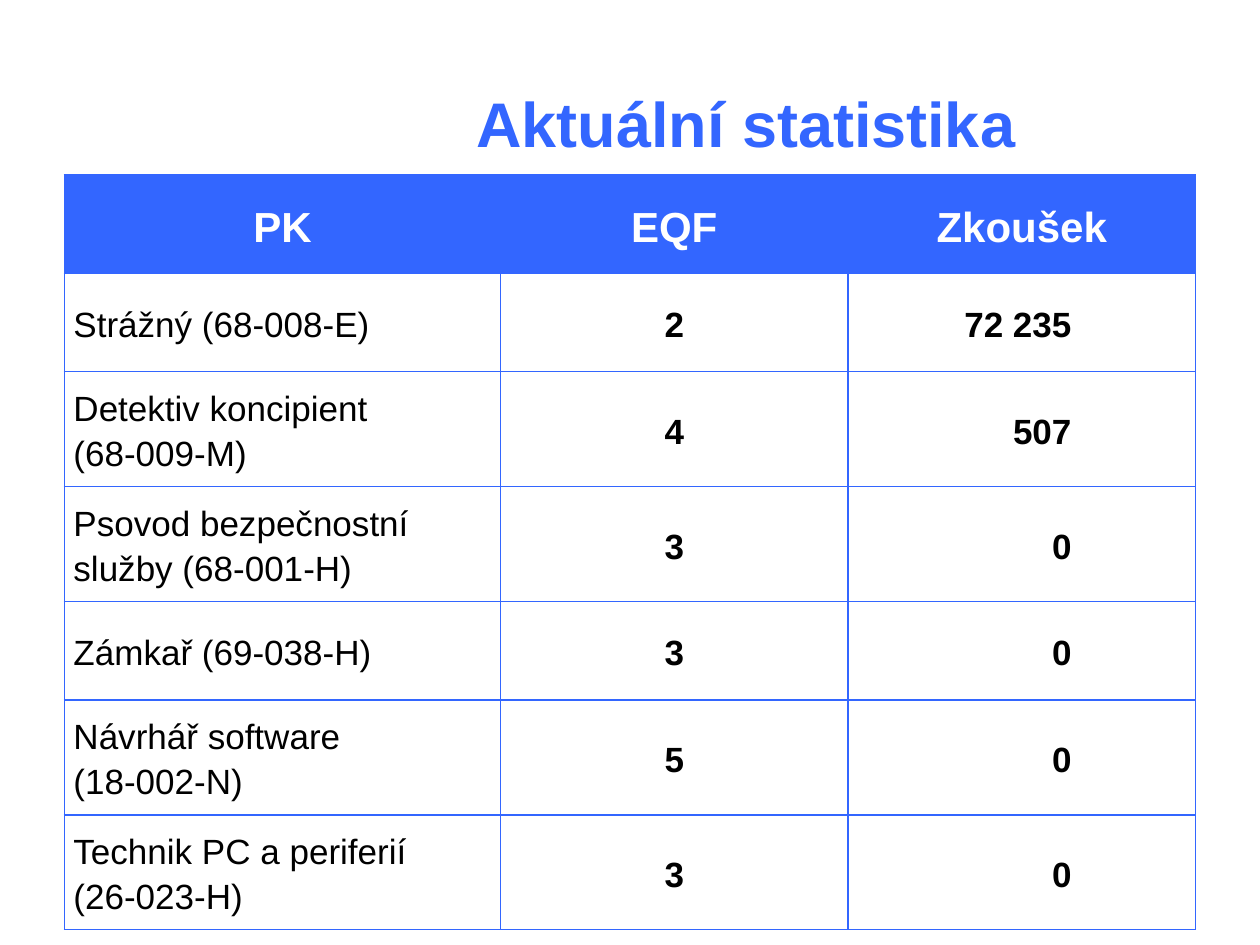
"""Build the slide with current examination statistics per qualification."""
from typing import NamedTuple, Optional

from lxml import etree
from pptx import Presentation
from pptx import util as u
from pptx.dml.color import RGBColor
from pptx.enum import text
from pptx.oxml import ns

BLUE = RGBColor(0x33, 0x66, 0xFF)
CYAN = RGBColor(0x00, 0xA9, 0xE2)
WHITE = RGBColor(0xFF, 0xFF, 0xFF)
BLACK = RGBColor(0, 0, 0)
FONT = "Arial"
INSET = u.Pt(5.2)
COUNT_INSET = u.Pt(70.9)
LEFT, CENTER, RIGHT = text.PP_ALIGN.LEFT, text.PP_ALIGN.CENTER, text.PP_ALIGN.RIGHT


class Style(NamedTuple):
    size: float
    color: RGBColor
    bold: bool


class Qualification(NamedTuple):
    name: str
    level: str
    exams: str
    height: float


TITLE = Style(36, BLUE, True)
TITLE_END = Style(44, CYAN, False)
HEADING = Style(24, WHITE, True)
NAME = Style(20, BLACK, False)
FIGURE = Style(20, BLACK, True)

HEADINGS = ("PK", "EQF", "Zkoušek")
HEADING_HEIGHT, SINGLE, DOUBLE = 56.2, 56.2, 65.7
COLUMN_WIDTHS = (249.2, 198.6, 198.6)
QUALIFICATIONS = (
    Qualification("Strážný (68-008-E)", "2", "72 235", SINGLE),
    Qualification("Detektiv koncipient\n(68-009-M)", "4", "507", DOUBLE),
    Qualification("Psovod bezpečnostní služby (68-001-H)", "3", "0", DOUBLE),
    Qualification("Zámkař (69-038-H)", "3", "0", SINGLE),
    Qualification("Návrhář software\n(18-002-N)", "5", "0", DOUBLE),
    Qualification("Technik PC a periferií\n(26-023-H)", "3", "0", DOUBLE),
)


def add_run(paragraph, wording: str, style: Style) -> None:
    run = paragraph.add_run()
    run.text = wording
    run.font.name = FONT
    run.font.size = u.Pt(style.size)
    run.font.bold = style.bold
    run.font.color.rgb = style.color


def add_borders(cell) -> None:
    properties = cell._tc.get_or_add_tcPr()
    for side in ("a:lnL", "a:lnR", "a:lnT", "a:lnB"):
        line = etree.SubElement(properties, ns.qn(side), w=str(u.Pt(1)))
        fill = etree.SubElement(line, ns.qn("a:solidFill"))
        etree.SubElement(fill, ns.qn("a:srgbClr"), val=str(BLUE))


def fill_cell(cell, wording: str, style: Style, align: text.PP_ALIGN,
              background: Optional[RGBColor] = None) -> None:
    add_borders(cell)
    if background is None:
        cell.fill.background()
    else:
        cell.fill.solid()
        cell.fill.fore_color.rgb = background
    cell.vertical_anchor = text.MSO_ANCHOR.MIDDLE
    cell.margin_left = cell.margin_top = cell.margin_bottom = INSET
    cell.margin_right = COUNT_INSET if align == RIGHT else INSET
    paragraph = cell.text_frame.paragraphs[0]
    paragraph.alignment = align
    paragraph.line_spacing = 1.15
    for index, line in enumerate(wording.split("\n")):
        if index:
            paragraph.add_line_break()
        add_run(paragraph, line, style)


def add_title(slide) -> None:
    title = slide.shapes.add_textbox(u.Pt(144.7), u.Pt(21.6), u.Pt(575.3), u.Pt(90))
    frame = title.text_frame
    frame.word_wrap = True
    frame.vertical_anchor = text.MSO_ANCHOR.MIDDLE
    paragraph = frame.paragraphs[0]
    paragraph.alignment = CENTER
    add_run(paragraph, "Aktuální statistika", TITLE)
    add_run(paragraph, " ", TITLE_END)


def add_statistics(slide) -> None:
    heights = [HEADING_HEIGHT] + [item.height for item in QUALIFICATIONS]
    statistics = slide.shapes.add_table(
        len(heights), len(HEADINGS), u.Pt(36.8), u.Pt(100),
        u.Pt(sum(COLUMN_WIDTHS)), u.Pt(sum(heights))).table
    statistics.first_row = statistics.horz_banding = False
    for column, width in zip(statistics.columns, COLUMN_WIDTHS):
        column.width = u.Pt(width)
    for row, height in zip(statistics.rows, heights):
        row.height = u.Pt(height)
    for column, heading in enumerate(HEADINGS):
        fill_cell(statistics.cell(0, column), heading, HEADING, CENTER, BLUE)
    for row, item in enumerate(QUALIFICATIONS, 1):
        fill_cell(statistics.cell(row, 0), item.name, NAME, LEFT)
        fill_cell(statistics.cell(row, 1), item.level, FIGURE, CENTER)
        fill_cell(statistics.cell(row, 2), item.exams, FIGURE, RIGHT)


def main() -> None:
    presentation = Presentation()
    presentation.slide_width, presentation.slide_height = u.Pt(720), u.Pt(540)
    slide = presentation.slides.add_slide(presentation.slide_layouts[6])
    add_title(slide)
    add_statistics(slide)
    presentation.save("out.pptx")


if __name__ == "__main__":
    main()
